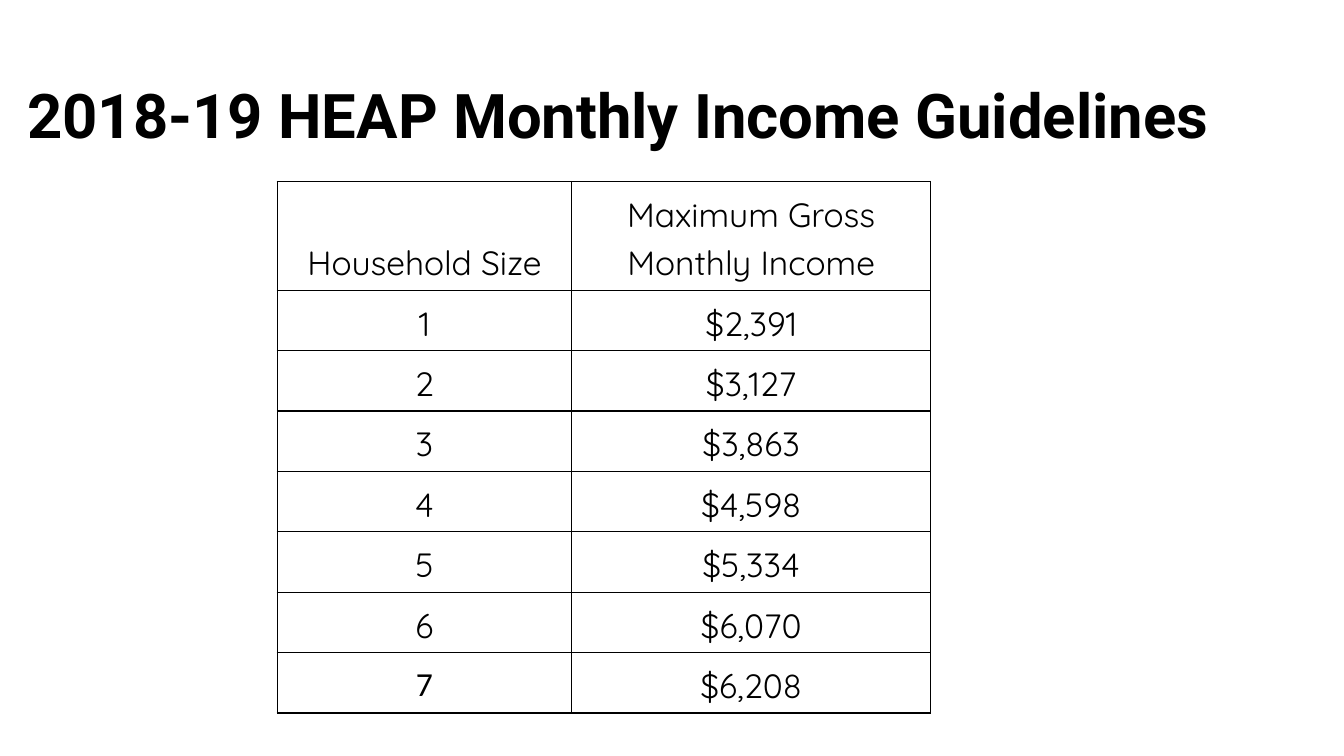
"""Build the HEAP monthly income guidelines slide."""
from lxml.etree import SubElement
from pptx import Presentation
from pptx.dml.color import RGBColor
from pptx.enum.text import MSO_ANCHOR as Anchor, PP_ALIGN as Align
from pptx.oxml.ns import qn
from pptx.util import Inches, Pt

BLACK = RGBColor(0, 0, 0)
WHITE = RGBColor(255, 255, 255)
COLUMN_WIDTHS = [2.92, 3.56]
HEADER_HEIGHT, ROW_HEIGHT = 0.7, 0.41
GUIDELINES = [
    ("Household Size", "Maximum Gross Monthly Income"),
    ("1", "$2,391"),
    ("2", "$3,127"),
    ("3", "$3,863"),
    ("4", "$4,598"),
    ("5", "$5,334"),
    ("6", "$6,070"),
    ("7", "$6,208"),
]


def add_run(paragraph, text, font_name, size, bold=False):
    run = paragraph.add_run()
    run.text = text
    run.font.name = font_name
    run.font.size = Pt(size)
    run.font.bold = bold
    run.font.color.rgb = BLACK


def add_borders(cell):
    properties = cell._tc.get_or_add_tcPr()
    for position, side in enumerate(("a:lnL", "a:lnR", "a:lnT", "a:lnB")):
        line = SubElement(properties, qn(side), w=str(Pt(1)))
        fill = SubElement(line, qn("a:solidFill"))
        SubElement(fill, qn("a:srgbClr"), val=str(BLACK))
        properties.insert(position, line)


presentation = Presentation()
presentation.slide_width = Inches(13.33)
presentation.slide_height = Inches(7.5)
slide = presentation.slides.add_slide(presentation.slide_layouts[5])
slide.background.fill.solid()
slide.background.fill.fore_color.rgb = WHITE

title = slide.shapes.title
title.left, title.top = Inches(0.17), Inches(0.8)
title.width, title.height = Inches(13), Inches(1)
title.text_frame.vertical_anchor = Anchor.TOP
title.text_frame.word_wrap = True
heading = title.text_frame.paragraphs[0]
heading.alignment = Align.LEFT
heading.line_spacing = 0.9
add_run(heading, "2018-19 HEAP Monthly Income Guidelines", "Roboto", 44, bold=True)

row_heights = [HEADER_HEIGHT] + [ROW_HEIGHT] * (len(GUIDELINES) - 1)
table = slide.shapes.add_table(
    len(GUIDELINES), len(COLUMN_WIDTHS), Inches(2.75), Inches(1.8),
    Inches(sum(COLUMN_WIDTHS)), Inches(sum(row_heights)),
).table
table.horz_banding = False
for column, width in zip(table.columns, COLUMN_WIDTHS):
    column.width = Inches(width)

for row, height, texts in zip(table.rows, row_heights, GUIDELINES):
    row.height = Inches(height)
    for cell, text in zip(row.cells, texts):
        cell.fill.background()
        add_borders(cell)
        cell.margin_left = cell.margin_right = Inches(0.06)
        cell.margin_top = cell.margin_bottom = Inches(0.06)
        cell.vertical_anchor = Anchor.BOTTOM if texts == GUIDELINES[0] else Anchor.TOP
        paragraph = cell.text_frame.paragraphs[0]
        paragraph.alignment = Align.CENTER
        paragraph.line_spacing = 1.15
        add_run(paragraph, text, "Calibri" if text == "7" else "Quicksand", 24)

presentation.save("out.pptx")
